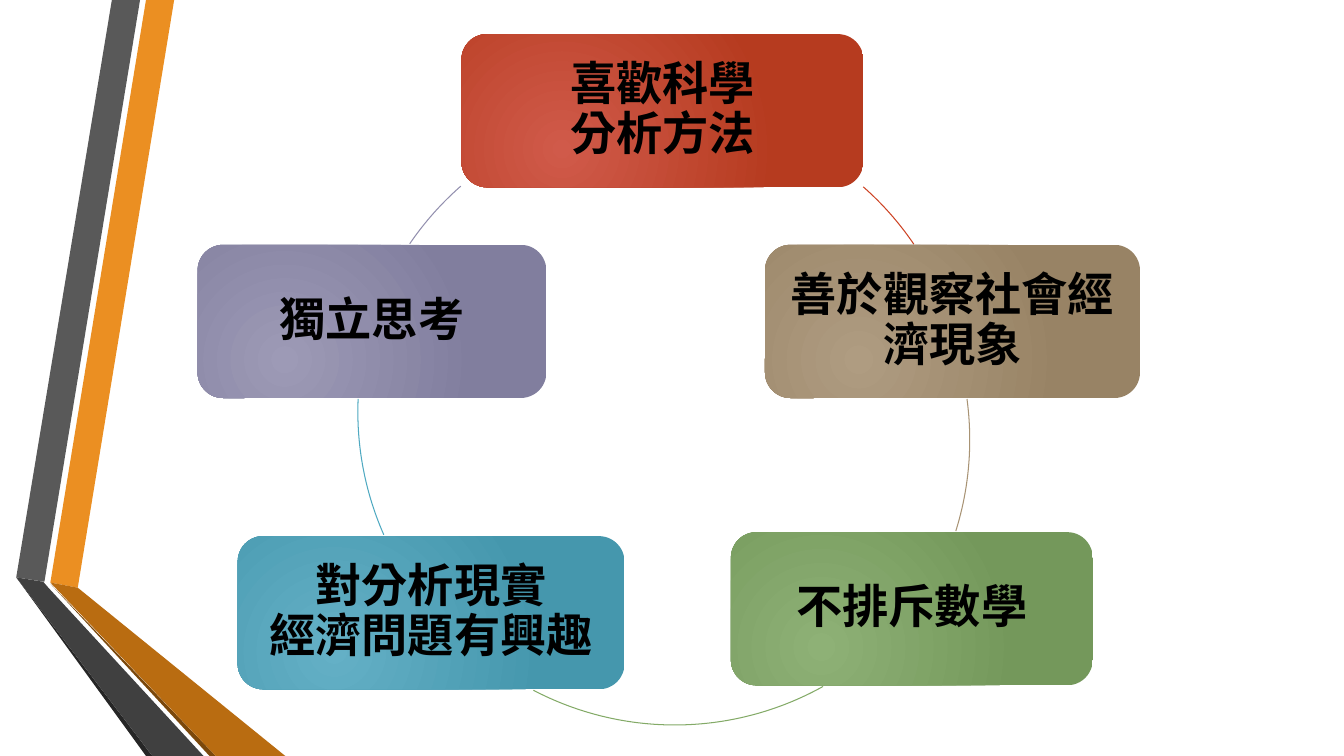
from lxml import etree
from pptx import Presentation
from pptx.dml.color import RGBColor
from pptx.enum.shapes import MSO_SHAPE
from pptx.enum.text import MSO_ANCHOR, PP_ALIGN
from pptx.oxml.ns import qn
from pptx.util import Cm, Pt

COLORS = {
    "orange": "EB8F22", "gray": "595959", "black_edge": "262626",
    "brown_edge": "7B480B", "brown": "B96C11", "charcoal": "404040",
    "text": "000000",
}
BOX_HEIGHT = 3.86
CIRCLE_SIZE = 15.37

presentation = Presentation()
presentation.slide_width = Cm(33.87)
presentation.slide_height = Cm(19.05)
slide = presentation.slides.add_slide(presentation.slide_layouts[6])
shapes = slide.shapes

# Folded ribbons on the left edge
ribbons = [
    ("orange", [(1.27, 14.68), (1.96, 14.81), (4.39, 0), (3.68, 0)]),
    ("gray", [(3.53, 0), (2.82, 0), (0.41, 14.55), (1.12, 14.66)]),
    ("black_edge", [(0.41, 14.55), (3.68, 19.05), (3.84, 19.05)]),
    ("brown_edge", [(1.27, 14.71), (5.28, 19.05), (5.44, 19.05)]),
    ("brown", [(1.27, 14.68), (5.44, 19.05), (7.19, 19.05), (1.96, 14.81)]),
    ("charcoal", [(5.13, 19.05), (1.22, 14.81), (1.09, 14.66),
                  (0.41, 14.55), (3.84, 19.05)]),
]
for color, corners in ribbons:
    points = [(Cm(x), Cm(y)) for x, y in corners]
    builder = shapes.build_freeform(*points[0])
    builder.add_line_segments(points[1:], close=True)
    ribbon = builder.convert_to_shape()
    ribbon.shadow.inherit = False
    ribbon.fill.solid()
    ribbon.fill.fore_color.rgb = RGBColor.from_string(COLORS[color])
    ribbon.line.fill.background()

# Cycle: text, box (left, top, width), gradient (centre, edge),
# arc (left, top, start degree, end degree), arc colour
cycle = [
    ("喜歡科學\v分析方法", (11.63, 0.86, 10.13), ("D05A4A", "B63B1F"),
     (8.99, 2.79, 311.4, 325.8), "CD4223"),
    ("善於觀察社會經濟現象", (19.28, 6.17, 9.45), ("AF9C81", "988365"),
     (9.07, 3.4, 352.3, 17.4), "A89374"),
    ("不排斥數學", (18.42, 13.41, 9.12), ("8EB176", "74985B"),
     (9.32, 2.9, 60.9, 117.6), "83AA67"),
    ("對分析現實\v經濟問題有興趣", (5.99, 13.51, 9.75), ("64B0C6", "4597AD"),
     (9.02, 2.69, 156.2, 182.4), "4FA9C1"),
    ("獨立思考", (4.98, 6.17, 8.79), ("9D9AB6", "817E9E"),
     (8.99, 2.79, 214.3, 228.8), "9390AF"),
]
frame_format = {
    "word_wrap": True, "vertical_anchor": MSO_ANCHOR.MIDDLE,
    "margin_left": Cm(0.36), "margin_right": Cm(0.36),
    "margin_top": Cm(0.36), "margin_bottom": Cm(0.36),
}
font_format = {"name": "Calibri", "size": Pt(33), "bold": True}

for text, (left, top, width), gradient, arc_place, arc_color in cycle:
    # Box with a radial gradient
    box = shapes.add_shape(MSO_SHAPE.ROUNDED_RECTANGLE,
                           Cm(left), Cm(top), Cm(width), Cm(BOX_HEIGHT))
    box.shadow.inherit = False
    box.line.fill.background()
    box.fill.gradient()
    for stop, color, position in zip(box.fill.gradient_stops, gradient, (0, 1)):
        stop.color.rgb = RGBColor.from_string(color)
        stop.position = position
    gradient_fill = box._element.spPr.find(qn("a:gradFill"))
    linear = gradient_fill.find(qn("a:lin"))
    radial = etree.Element(qn("a:path"), {"path": "circle"})
    etree.SubElement(radial, qn("a:fillToRect"),
                     {"l": "50000", "t": "100000", "r": "100000", "b": "50000"})
    gradient_fill.replace(linear, radial)

    # Label
    frame = box.text_frame
    for name, value in frame_format.items():
        setattr(frame, name, value)
    frame.text = text
    paragraph = frame.paragraphs[0]
    paragraph.alignment = PP_ALIGN.CENTER
    paragraph.line_spacing = 0.9
    for run in paragraph.runs:
        for name, value in font_format.items():
            setattr(run.font, name, value)
        run.font.color.rgb = RGBColor.from_string(COLORS["text"])
        run._r.get_or_add_rPr().set("lang", "zh-TW")

    # Arc to the next box; an adjustment of 0.6 is one degree
    arc_left, arc_top, start, end = arc_place
    arc = shapes.add_shape(MSO_SHAPE.ARC, Cm(arc_left), Cm(arc_top),
                           Cm(CIRCLE_SIZE), Cm(CIRCLE_SIZE))
    arc.shadow.inherit = False
    arc.fill.background()
    arc.line.color.rgb = RGBColor.from_string(arc_color)
    arc.line.width = Pt(0.75)
    arc.adjustments[0] = start * 0.6
    arc.adjustments[1] = end * 0.6

presentation.save("out.pptx")
